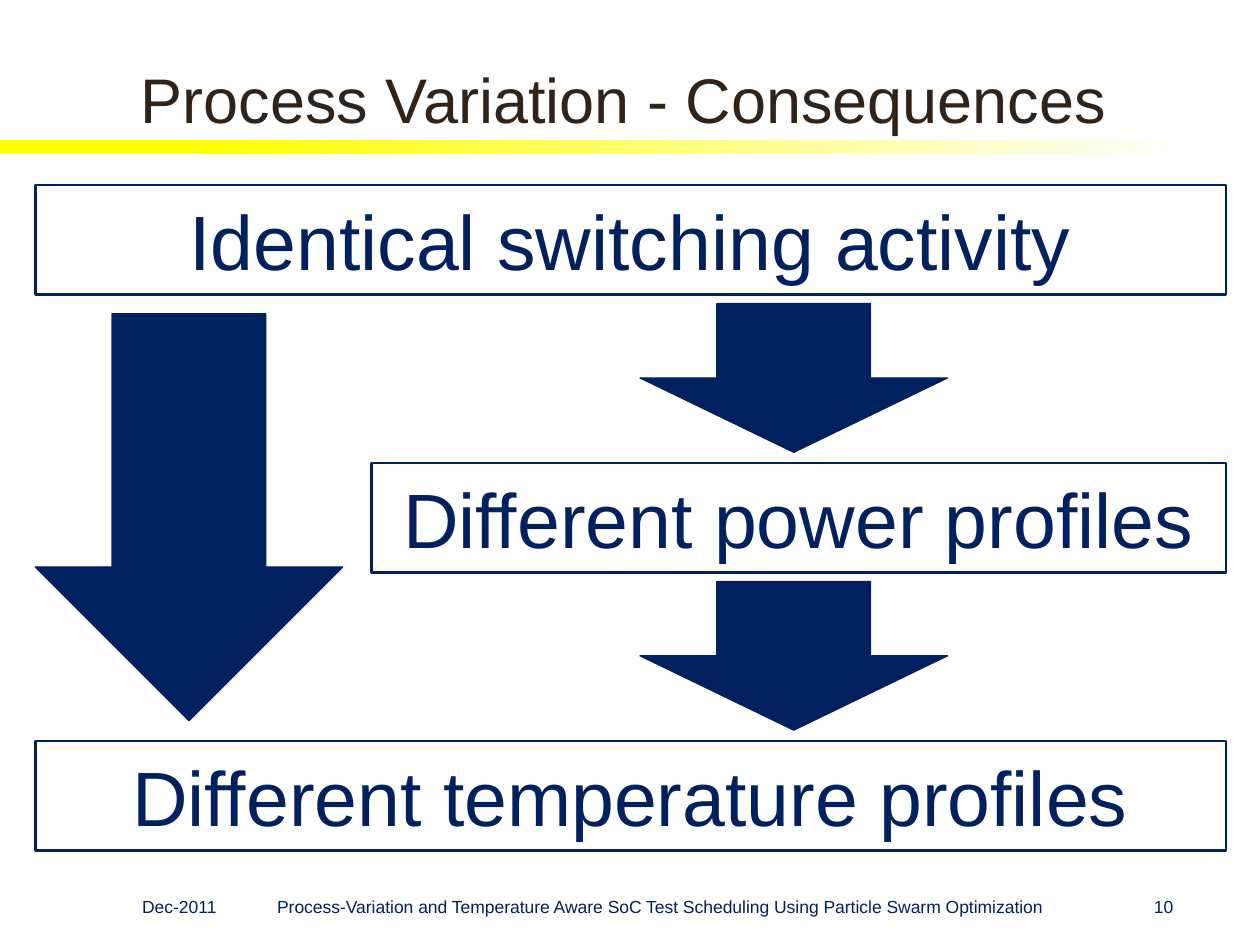
from dataclasses import dataclass

import pptx
import pptx.dml.color
import pptx.enum.shapes
import pptx.enum.text
import pptx.util

Inches = pptx.util.Inches
Pt = pptx.util.Pt
RGB = pptx.dml.color.RGBColor
Shape = pptx.enum.shapes.MSO_SHAPE
Align = pptx.enum.text.PP_ALIGN
Anchor = pptx.enum.text.MSO_ANCHOR


@dataclass(frozen=True)
class Theme:
    font: str = "Arial"
    navy: RGB = RGB(0x00, 0x20, 0x60)
    brown: RGB = RGB(0x31, 0x23, 0x18)
    yellow: RGB = RGB(0xFF, 0xFF, 0x00)
    white: RGB = RGB(0xFF, 0xFF, 0xFF)
    title_size: int = 36
    box_size: int = 44
    footer_size: int = 10


class SlideBuilder:
    def __init__(self, slide, theme):
        self.slide = slide
        self.theme = theme

    def _shape(self, kind, left, top, width, height):
        s = self.slide.shapes.add_shape(
            kind, Inches(left), Inches(top), Inches(width), Inches(height))
        s.shadow.inherit = False
        return s

    def _write(self, s, text, size, color, align, anchor):
        tf = s.text_frame
        tf.word_wrap = True
        tf.vertical_anchor = anchor
        tf.text = text
        p = tf.paragraphs[0]
        p.alignment = align
        font = p.runs[0].font
        font.name = self.theme.font
        font.size = Pt(size)
        font.color.rgb = color

    def bar(self, left, top, width, height, fade=False):
        """Yellow rule under the title, optionally fading to white."""
        s = self._shape(Shape.RECTANGLE, left, top, width, height)
        s.line.fill.background()
        if fade:
            s.fill.gradient()
            s.fill.gradient_angle = 0
            colors = (self.theme.yellow, self.theme.white)
            for stop, position, color in zip(s.fill.gradient_stops, (0, 1), colors):
                stop.position = position
                stop.color.rgb = color
        else:
            s.fill.solid()
            s.fill.fore_color.rgb = self.theme.yellow

    def text(self, text, left, top, width, height, size, color, align=Align.LEFT):
        s = self.slide.shapes.add_textbox(
            Inches(left), Inches(top), Inches(width), Inches(height))
        self._write(s, text, size, color, align, Anchor.BOTTOM)

    def box(self, text, left, top, width, height):
        s = self._shape(Shape.RECTANGLE, left, top, width, height)
        s.fill.background()
        s.line.color.rgb = self.theme.navy
        s.line.width = Pt(1.5)
        self._write(s, text, self.theme.box_size, self.theme.navy,
                    Align.CENTER, Anchor.MIDDLE)

    def down_arrow(self, left, top, width, height):
        s = self._shape(Shape.DOWN_ARROW, left, top, width, height)
        s.fill.solid()
        s.fill.fore_color.rgb = self.theme.navy
        s.line.color.rgb = self.theme.navy
        s.line.width = Pt(0.75)


def main():
    prs = pptx.Presentation()
    prs.slide_width = Inches(10)
    prs.slide_height = Inches(7.5)
    theme = Theme()
    b = SlideBuilder(prs.slides.add_slide(prs.slide_layouts[6]), theme)

    b.bar(0, 1.11, 2.33, 0.11)
    b.bar(1.58, 1.11, 7.92, 0.11, fade=True)
    b.text("Process Variation - Consequences", 1.02, 0.21, 8.08, 0.92,
           theme.title_size, theme.brown)

    left, right = 0.28, 9.73
    first_top, row_step, box_height = 1.47, 2.205, 0.87
    boxes = [
        ("Identical switching activity", left),
        ("Different power profiles", 2.95),
        ("Different temperature profiles", left),
    ]
    for row, (text, box_left) in enumerate(boxes):
        b.box(text, box_left, first_top + row * row_step, right - box_left, box_height)

    arrow_width = 2.44
    b.down_arrow(left, 2.49, arrow_width, 3.23)
    for row in range(2):
        arrow_top = first_top + row * row_step + box_height + 0.07
        b.down_arrow(5.08, arrow_top, arrow_width, 1.18)

    footers = [
        ("Dec-2011", 1.03, 0.82, Align.LEFT),
        ("Process-Variation and Temperature Aware SoC Test Scheduling "
         "Using Particle Swarm Optimization", 1.93, 6.61, Align.CENTER),
        ("10", 8.62, 0.79, Align.RIGHT),
    ]
    for text, footer_left, width, align in footers:
        b.text(text, footer_left, 6.98, width, 0.35,
               theme.footer_size, theme.navy, align)

    prs.save("out.pptx")


if __name__ == "__main__":
    main()
